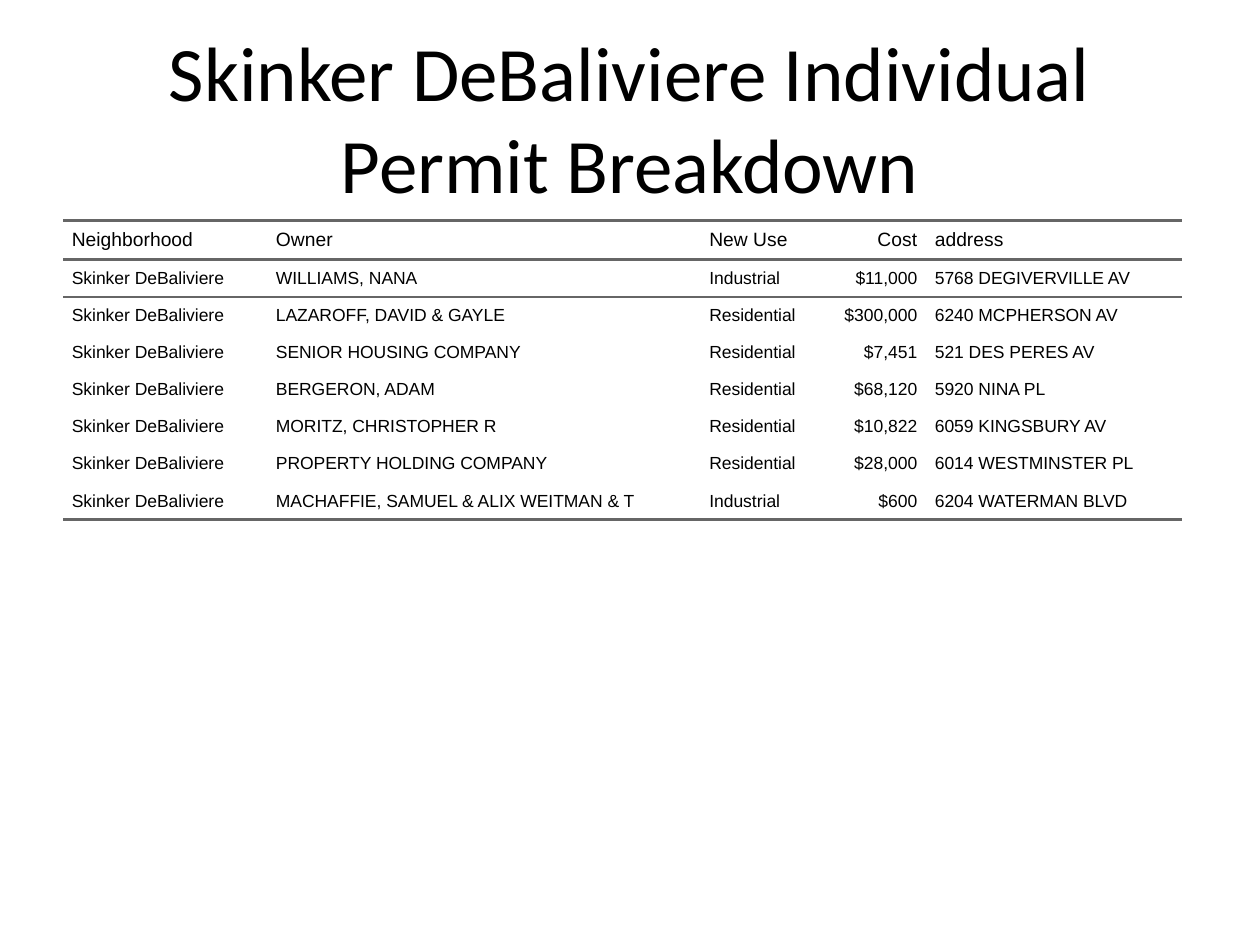
from dataclasses import dataclass

from lxml.etree import SubElement
from pptx import Presentation
from pptx.dml.color import RGBColor
from pptx.enum.text import MSO_ANCHOR, PP_ALIGN
from pptx.oxml.ns import qn
from pptx.util import Inches, Pt


@dataclass(frozen=True)
class Theme:
    ink: str = "000000"
    rule: str = "666666"
    head: str = "Calibri"
    body: str = "Arial"
    title: int = 44
    label: int = 11
    text: int = 10
    line: float = 1.5
    gap: int = 5
    pad: float = 0.07
    plain: str = "{2D5ABB26-0587-4C30-8999-92F81FD0307C}"


class Deck:
    """Holds the theme and the current slide; lengths are grid units of 1/4 inch."""

    unit = 0.25

    def __init__(self, theme):
        self.theme = theme
        self.prs = Presentation()
        self.prs.slide_width, self.prs.slide_height = Inches(10), Inches(7.5)
        self.slide = self.prs.slides.add_slide(self.prs.slide_layouts[5])

    def span(self, *units):
        return [Inches(n * self.unit) for n in units]

    def style(self, para, font, size, align):
        para.alignment = align
        for run in para.runs:
            run.font.name, run.font.size = font, Pt(size)
            run.font.bold = False
            run.font.color.rgb = RGBColor.from_string(self.theme.ink)

    def title(self, text, box):
        shape = self.slide.shapes.title
        shape.left, shape.top, shape.width, shape.height = self.span(*box)
        frame = shape.text_frame
        frame.text = text
        frame.vertical_anchor = MSO_ANCHOR.MIDDLE
        self.style(frame.paragraphs[0], self.theme.head, self.theme.title, PP_ALIGN.CENTER)

    def border(self, cell, *sides):
        props = cell._tc.get_or_add_tcPr()
        for side in sides:
            line = SubElement(props, qn(f"a:ln{side}"), w=str(Pt(self.theme.line)))
            fill = SubElement(line, qn("a:solidFill"))
            SubElement(fill, qn("a:srgbClr"), val=self.theme.rule)

    def cell(self, cell, text, size, align):
        pad = Inches(self.theme.pad)
        cell.margin_left = cell.margin_right = 0
        cell.margin_top = cell.margin_bottom = pad
        cell.vertical_anchor = MSO_ANCHOR.MIDDLE
        cell.text_frame.text = text
        para = cell.text_frame.paragraphs[0]
        self.style(para, self.theme.body, size, align)
        para.space_before = para.space_after = Pt(self.theme.gap)
        props = para._p.get_or_add_pPr()
        for side in ("marL", "marR"):
            props.set(side, str(pad))
        props.set("indent", "0")

    def table(self, rows, spot, widths, right):
        size = self.span(*spot, sum(widths) / self.unit, len(rows))
        frame = self.slide.shapes.add_table(len(rows), len(widths), *size)
        table = frame.table
        table.first_row = table.horz_banding = False
        next(frame.element.iter(qn("a:tableStyleId"))).text = self.theme.plain
        for col, width in zip(table.columns, widths):
            col.width = Inches(width)
        # Rules frame the header and close the last row
        edges = {0: "TB", 1: "T", len(rows) - 1: "B"}
        for r, row in enumerate(rows):
            kind = self.theme.text if r else self.theme.label
            for c, text in enumerate(row):
                cell = table.cell(r, c)
                align = PP_ALIGN.RIGHT if c == right else PP_ALIGN.LEFT
                self.cell(cell, text, kind, align)
                self.border(cell, *edges.get(r, ""))
                cell.fill.background()

    def save(self):
        self.prs.save("out.pptx")


AREA = "Skinker DeBaliviere"
HEADS = ("Neighborhood", "Owner", "New Use", "Cost", "address")
PERMITS = [
    ("WILLIAMS, NANA", "Industrial", "$11,000", "5768 DEGIVERVILLE AV"),
    ("LAZAROFF, DAVID & GAYLE", "Residential", "$300,000", "6240 MCPHERSON AV"),
    ("SENIOR HOUSING COMPANY", "Residential", "$7,451", "521 DES PERES AV"),
    ("BERGERON, ADAM", "Residential", "$68,120", "5920 NINA PL"),
    ("MORITZ, CHRISTOPHER R", "Residential", "$10,822", "6059 KINGSBURY AV"),
    ("PROPERTY HOLDING COMPANY", "Residential", "$28,000", "6014 WESTMINSTER PL"),
    ("MACHAFFIE, SAMUEL & ALIX WEITMAN & T", "Industrial", "$600", "6204 WATERMAN BLVD"),
]


def main():
    deck = Deck(Theme())
    # Heading
    deck.title(f"{AREA} Individual Permit Breakdown", (2, 1.2, 36, 5))
    # Permit list
    rows = [HEADS] + [(AREA, *permit) for permit in PERMITS]
    deck.table(rows, (2, 7), (1.62, 3.44, 1.04, 0.75, 2.03), HEADS.index("Cost"))
    deck.save()


if __name__ == "__main__":
    main()
